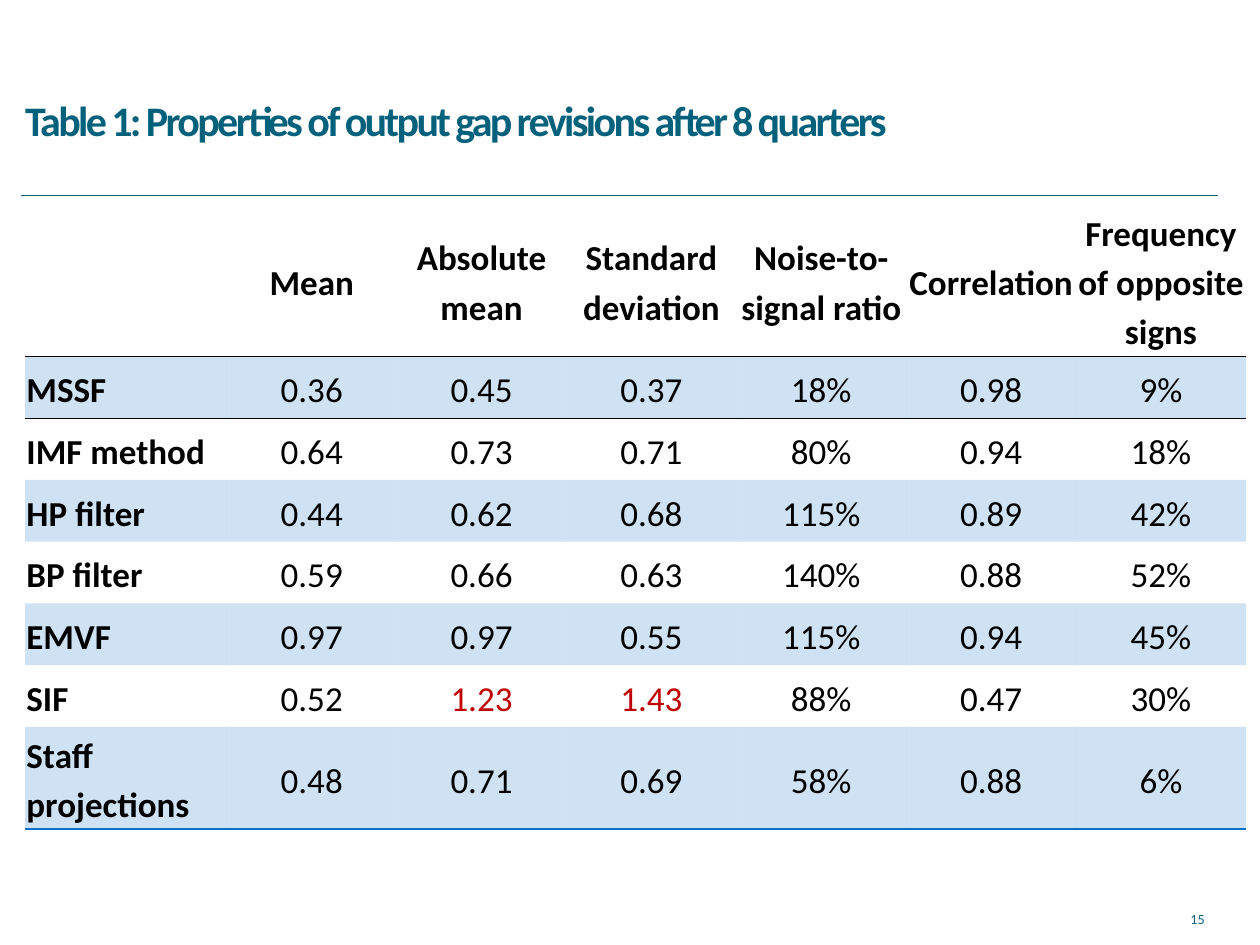
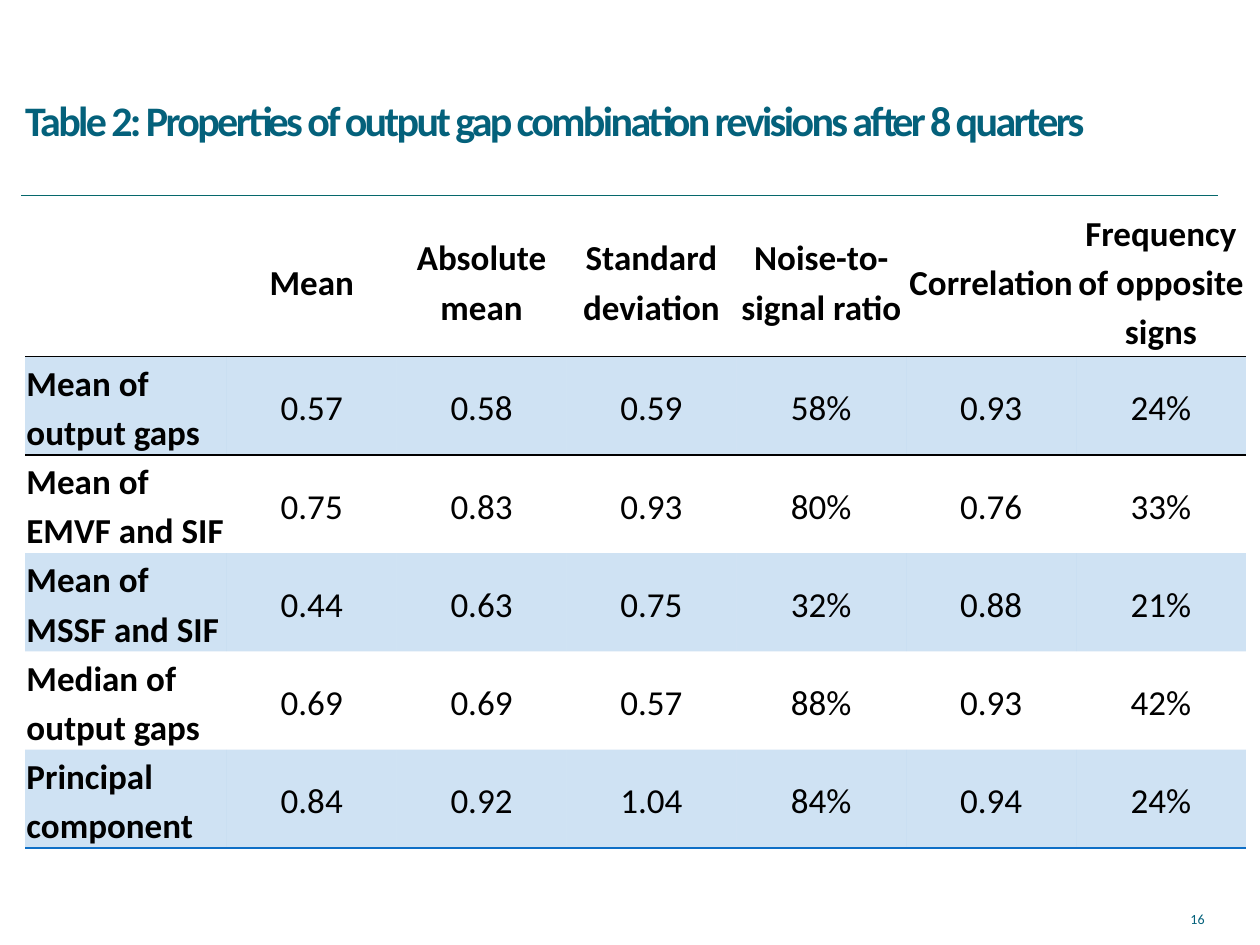
import dataclasses

import lxml.etree
import pptx
import pptx.dml.color
import pptx.enum.shapes
import pptx.enum.text
import pptx.oxml.ns
import pptx.util

Inches = pptx.util.Inches
Pt = pptx.util.Pt
RGB = pptx.dml.color.RGBColor.from_string
ALIGN = pptx.enum.text.PP_ALIGN
MIDDLE = pptx.enum.text.MSO_ANCHOR.MIDDLE
qn = pptx.oxml.ns.qn


@dataclasses.dataclass(frozen=True)
class Theme:
    font: str = "Calibri"
    heading: str = "04617B"
    rule: str = "06686C"
    band: str = "0F6FC6"
    band_alpha: int = 20
    ink: str = "000000"
    outlier: str = "C00000"
    title_size: int = 24
    table_size: int = 20
    number_size: int = 8


theme = Theme()

TABLE_WIDTH = 9.69
LABEL_WIDTH = 1.6
MEASURES = ["", "Mean", "Absolute mean", "Standard deviation",
            "Noise-to-signal ratio", "Correlation", "Frequency of opposite signs"]
MEASURE_WIDTH = (TABLE_WIDTH - LABEL_WIDTH) / (len(MEASURES) - 1)

REVISION_TABLES = [
    {
        "number": "15",
        "title": "Table 1: Properties of output gap revisions after 8 quarters",
        "heights": [1.21] + [0.49] * 6 + [0.81],
        "outliers": {"1.23", "1.43"},
        "methods": [
            ["MSSF", "0.36", "0.45", "0.37", "18%", "0.98", "9%"],
            ["IMF method", "0.64", "0.73", "0.71", "80%", "0.94", "18%"],
            ["HP filter", "0.44", "0.62", "0.68", "115%", "0.89", "42%"],
            ["BP filter", "0.59", "0.66", "0.63", "140%", "0.88", "52%"],
            ["EMVF", "0.97", "0.97", "0.55", "115%", "0.94", "45%"],
            ["SIF", "0.52", "1.23", "1.43", "88%", "0.47", "30%"],
            ["Staff projections", "0.48", "0.71", "0.69", "58%", "0.88", "6%"],
        ],
    },
    {
        "number": "16",
        "title": "Table 2: Properties of output gap combination revisions after 8 quarters",
        "heights": [1.21] + [0.78] * 5,
        "outliers": set(),
        "methods": [
            ["Mean of output gaps", "0.57", "0.58", "0.59", "58%", "0.93", "24%"],
            ["Mean of EMVF and SIF", "0.75", "0.83", "0.93", "80%", "0.76", "33%"],
            ["Mean of MSSF and SIF", "0.44", "0.63", "0.75", "32%", "0.88", "21%"],
            ["Median of output gaps", "0.69", "0.69", "0.57", "88%", "0.93", "42%"],
            ["Principal component", "0.84", "0.92", "1.04", "84%", "0.94", "24%"],
        ],
    },
]


def style_text(frame, size, color, bold=False, align=ALIGN.LEFT, spacing=1.0):
    for paragraph in frame.paragraphs:
        paragraph.alignment = align
        paragraph.line_spacing = spacing
        for run in paragraph.runs:
            run.font.name = theme.font
            run.font.size = Pt(size)
            run.font.bold = bold
            run.font.color.rgb = RGB(color)


def add_bottom_border(cell, color):
    properties = cell._tc.get_or_add_tcPr()
    border = lxml.etree.Element(qn("a:lnB"), w=str(Pt(1)))
    solid = lxml.etree.SubElement(border, qn("a:solidFill"))
    lxml.etree.SubElement(solid, qn("a:srgbClr"), val=color)
    properties.insert(0, border)


presentation = pptx.Presentation()
presentation.slide_width = Inches(10)
presentation.slide_height = Inches(7.5)
title_only = presentation.slide_layouts[5]

for content in REVISION_TABLES:
    slide = presentation.slides.add_slide(title_only)

    rule = slide.shapes.add_connector(
        pptx.enum.shapes.MSO_CONNECTOR.STRAIGHT,
        Inches(0.17), Inches(1.55), Inches(9.67), Inches(1.55))
    rule.line.color.rgb = RGB(theme.rule)
    rule.line.width = Pt(0.75)
    lxml.etree.SubElement(rule._element.spPr, qn("a:effectLst"))

    title = slide.shapes.title
    title.left, title.top = Inches(0.2), Inches(0.52)
    title.width, title.height = Inches(9.5), Inches(1.03)
    heading = title.text_frame
    heading.text = content["title"]
    heading.word_wrap = True
    heading.auto_size = pptx.enum.text.MSO_AUTO_SIZE.NONE
    heading.vertical_anchor = pptx.enum.text.MSO_ANCHOR.BOTTOM
    heading.margin_left = heading.margin_right = 0
    heading.margin_top, heading.margin_bottom = Inches(0.1), Inches(0.4)
    style_text(heading, theme.title_size, theme.heading, bold=True, spacing=0.85)
    heading.paragraphs[0].runs[0].font._element.set("spc", "-150")

    page_number = slide.shapes.add_textbox(
        Inches(7.33), Inches(7.17), Inches(2.33), Inches(0.25)).text_frame
    page_number.text = content["number"]
    page_number.word_wrap = True
    page_number.vertical_anchor = MIDDLE
    style_text(page_number, theme.number_size, theme.heading, align=ALIGN.RIGHT)

    rows = [MEASURES] + content["methods"]
    frame = slide.shapes.add_table(
        len(rows), len(MEASURES), Inches(0.2), Inches(1.62),
        Inches(TABLE_WIDTH), Inches(sum(content["heights"])))
    properties_table = frame.table
    properties_table.first_row = False
    properties_table.horz_banding = False
    style_id = properties_table._tbl.tblPr.find(qn("a:tableStyleId"))
    style_id.text = "{2D5ABB26-0587-4C30-8999-92F81FD0307C}"
    for index, column in enumerate(properties_table.columns):
        column.width = Inches(MEASURE_WIDTH if index else LABEL_WIDTH)

    borders = {0: theme.ink, 1: theme.ink, len(rows) - 1: theme.band}
    for row_index, values in enumerate(rows):
        properties_table.rows[row_index].height = Inches(content["heights"][row_index])
        for column_index, value in enumerate(values):
            cell = properties_table.cell(row_index, column_index)
            is_label = row_index == 0 or column_index == 0
            cell.text_frame.text = value
            cell.vertical_anchor = MIDDLE
            cell.margin_left = cell.margin_right = Inches(0.01 if is_label else 0.07)
            cell.margin_top = cell.margin_bottom = 0
            style_text(
                cell.text_frame, theme.table_size,
                theme.outlier if value in content["outliers"] else theme.ink,
                bold=is_label,
                align=ALIGN.CENTER if column_index else ALIGN.LEFT,
                spacing=1.15)
            if row_index % 2:
                cell.fill.solid()
                cell.fill.fore_color.rgb = RGB(theme.band)
                tint = cell._tc.tcPr.find(".//" + qn("a:srgbClr"))
                lxml.etree.SubElement(tint, qn("a:alpha"), val=str(theme.band_alpha * 1000))
            else:
                cell.fill.background()
            if row_index in borders:
                add_bottom_border(cell, borders[row_index])

presentation.save("out.pptx")
